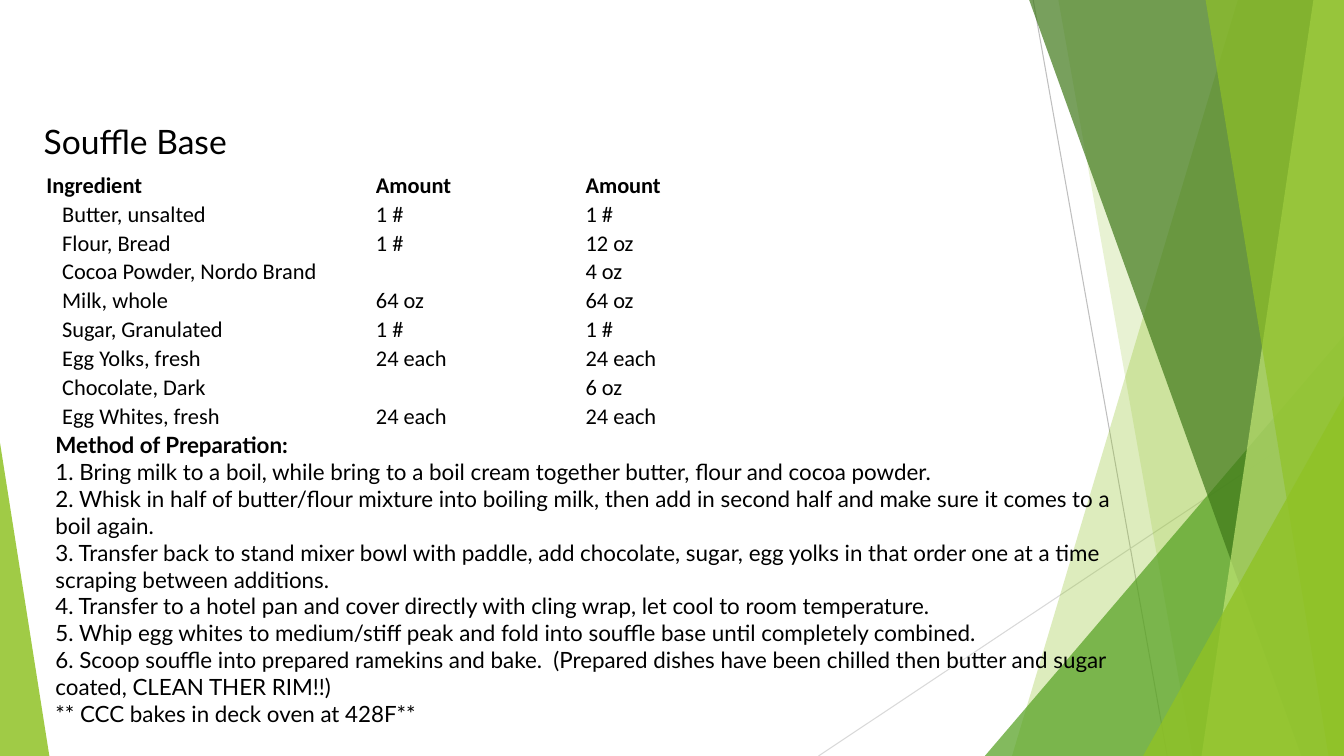
from lxml import etree
from pptx import Presentation, util as u
from pptx.dml.color import RGBColor
from pptx.enum import shapes, text
from pptx.oxml import ns

COLS, ROWS = 40, 22.5  # grid of the slide, three cells to the inch


def rgb(hue):
    return RGBColor.from_string(hue)


class Deck:
    ink = "000000"
    head, cell = "Lato", "Calibri"
    size = 16

    def __init__(self):
        self.prs = Presentation()
        self.prs.slide_width, self.prs.slide_height = u.Inches(13.33), u.Inches(7.5)
        self.page = self.prs.slides.add_slide(self.prs.slide_layouts[1])
        self.tree = self.page.shapes

    def x(self, col):
        return round(self.prs.slide_width * col / COLS)

    def y(self, row):
        return round(self.prs.slide_height * row / ROWS)

    def box(self, col, row, wide, high):
        return self.x(col), self.y(row), self.x(wide), self.y(high)

    def paint(self, shape, hue, alpha):
        shape.shadow.inherit = False
        shape.fill.solid()
        shape.fill.fore_color.rgb = rgb(hue)
        shape.line.fill.background()
        tone = shape.fill._xPr.find(".//" + ns.qn("a:srgbClr"))
        etree.SubElement(tone, ns.qn("a:alpha"), val=str(alpha * 1000))

    def line(self, start, end, hue):
        rule = self.tree.add_connector(
            shapes.MSO_CONNECTOR.STRAIGHT,
            self.x(start[0]), self.y(start[1]), self.x(end[0]), self.y(end[1]))
        rule.line.color.rgb = rgb(hue)
        rule.line.width = u.Pt(0.75)
        etree.SubElement(rule._element.spPr, ns.qn("a:effectLst"))

    def shard(self, top, foot, hue, alpha):
        """A band from a slanted left edge to the slide's right edge."""
        form = self.tree.build_freeform(self.x(top), 0)
        form.add_line_segments([(self.x(c), self.y(r)) for c, r in
                                ((COLS, 0), (COLS, ROWS), (foot, ROWS))])
        self.paint(form.convert_to_shape(), hue, alpha)

    def wedge(self, col, row, wide, peak, hue, alpha):
        """A right triangle that stands on the slide's lower edge."""
        shape = self.tree.add_shape(shapes.MSO_SHAPE.ISOSCELES_TRIANGLE,
                                    *self.box(col, row, wide, ROWS - row))
        shape.adjustments[0] = peak
        self.paint(shape, hue, alpha)

    def style(self, para, face, size, bold=False):
        for run in para.runs:
            run.font.name, run.font.size, run.font.bold = face, u.Pt(size), bold
            run.font.color.rgb = rgb(self.ink)

    def table(self, col, row, wides, high, rows):
        grid = self.tree.add_table(len(rows), len(wides), *self.box(
            col, row, sum(wides), high * len(rows))).table
        grid.first_row = grid.horz_banding = False
        for part, wide in zip(grid.columns, wides):
            part.width = self.x(wide)
        for i, words in enumerate(rows):
            grid.rows[i].height = self.y(high)
            for j, word in enumerate(words):
                self.fill(grid.cell(i, j), word, i == 0, i > 0 and j == 0)

    def fill(self, cell, word, bold, inset):
        cell.fill.background()
        cell.vertical_anchor = text.MSO_ANCHOR.BOTTOM
        cell.margin_left = self.x(0.5 if inset else 0.03)
        cell.margin_right, cell.margin_top = self.x(0.03), self.y(0.03)
        cell.margin_bottom = 0
        para = cell.text_frame.paragraphs[0]
        if word:
            para.text = word
            self.style(para, self.cell, self.size, bold)
        else:  # keeps an empty cell from stretching its row
            etree.SubElement(para._p, ns.qn("a:endParaRPr"), sz=str(self.size * 100))

    def place(self, slot, spot, lines, size, lead=False):
        """Put text in a placeholder, in front of the shapes drawn so far."""
        hold = self.page.placeholders[slot]
        hold.left, hold.top, hold.width, hold.height = self.box(*spot)
        self.tree._spTree.append(hold._element)
        frame = hold.text_frame
        frame.word_wrap = True
        frame.auto_size = text.MSO_AUTO_SIZE.SHAPE_TO_FIT_TEXT
        frame.vertical_anchor = text.MSO_ANCHOR.TOP
        frame.text = "\n".join(lines)
        for i, para in enumerate(frame.paragraphs):
            para.alignment = text.PP_ALIGN.LEFT
            para.space_before = u.Pt(0)
            prop = para._p.get_or_add_pPr()
            prop.set("marL", "0")
            prop.set("indent", "0")
            etree.SubElement(prop, ns.qn("a:buNone"))
            self.style(para, self.head, size, lead and i == 0)


FOODS = [
    ("Ingredient", "Amount", "", "Amount"),
    ("Butter, unsalted", "1 #", "", "1 #"),
    ("Flour, Bread", "1 #", "", "12 oz"),
    ("Cocoa Powder, Nordo Brand", "", "", "4 oz"),
    ("Milk, whole", "64 oz", "", "64 oz"),
    ("Sugar, Granulated", "1 #", "", "1 #"),
    ("Egg Yolks, fresh", "24 each", "", "24 each"),
    ("Chocolate, Dark", "", "", "6 oz"),
    ("Egg Whites, fresh", "24 each", "", "24 each"),
]
STEPS = [
    "Method of Preparation:",
    "1. Bring milk to a boil, while bring to a boil cream together butter, flour and cocoa powder.",
    "2. Whisk in half of butter/flour mixture into boiling milk, then add in second half "
    "and make sure it comes to a boil again.",
    "3. Transfer back to stand mixer bowl with paddle, add chocolate, sugar, egg yolks "
    "in that order one at a time scraping between additions.",
    "4. Transfer to a hotel pan and cover directly with cling wrap, let cool to room temperature.",
    "5. Whip egg whites to medium/stiff peak and fold into souffle base until completely combined.",
    "6. Scoop souffle into prepared ramekins and bake.  (Prepared dishes have been chilled "
    "then butter and sugar coated, CLEAN THER RIM!!)",
    "** CCC bakes in deck oven at 428F**",
]


def main():
    deck = Deck()

    # Green facets
    deck.line((30.75, 0), (34.74, ROWS), "BFBFBF")
    deck.line((COLS, 12.09), (24.36, ROWS), "D9D9D9")
    deck.shard(36.84, 30.12, "90C226", 30)
    deck.shard(31.5, 35.49, "90C226", 20)
    deck.wedge(29.31, 9.99, 10.69, 1, "54A021", 72)
    deck.shard(30.63, 38.73, "3F7819", 70)
    deck.shard(39.09, 35.76, "C0E474", 70)
    deck.shard(35.88, 39.54, "90C226", 65)
    deck.wedge(34.02, 11.79, 5.98, 1, "90C226", 80)
    deck.wedge(0, 13.17, 1.47, 0, "90C226", 85)

    # Recipe
    deck.table(1.35, 5.07, (9.81, 2.91, 3.33, 4.8), 0.86, FOODS)
    deck.place(0, (1, 3.45, 21.48, 1.5), ["Souffle Base"], 24)
    deck.place(1, (1.35, 12.69, 32.19, 9.18), STEPS, deck.size, lead=True)

    deck.prs.save("out.pptx")


if __name__ == "__main__":
    main()
